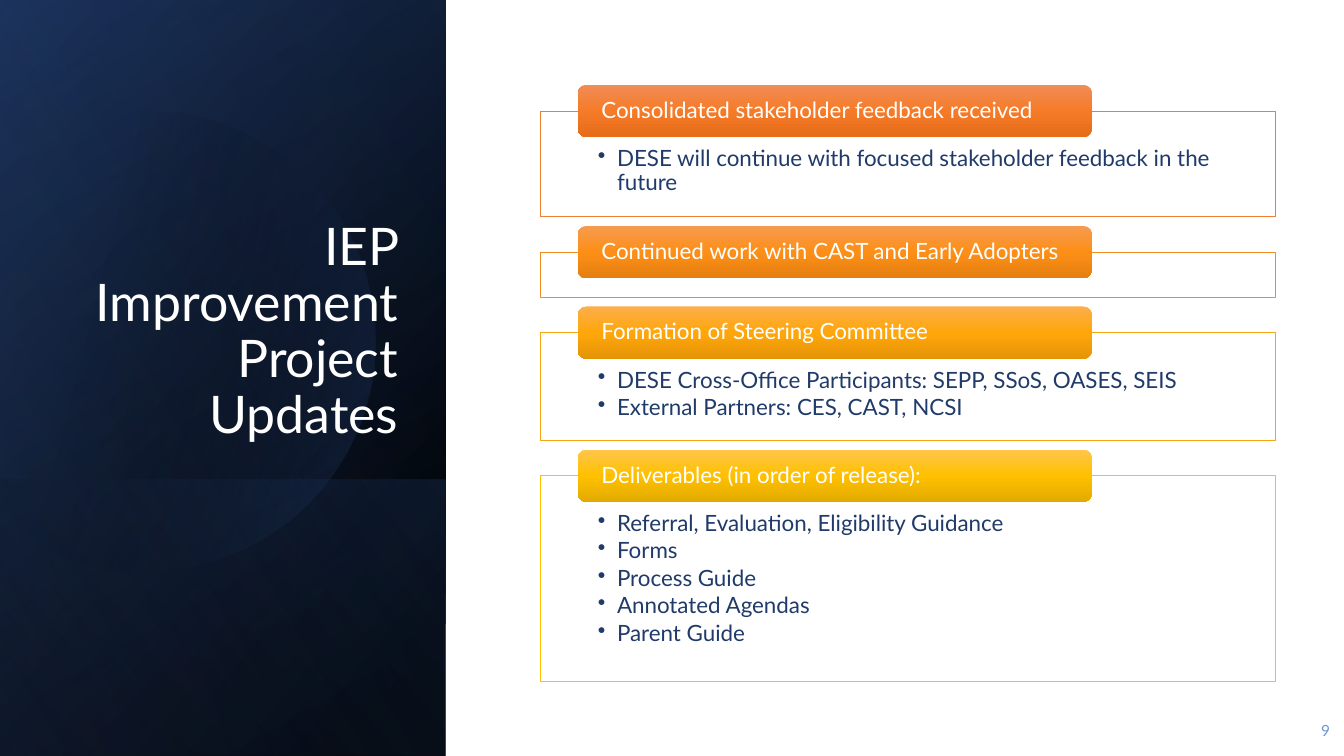
from lxml import etree
from pptx import Presentation
from pptx.dml.color import RGBColor
from pptx.enum.shapes import MSO_SHAPE
from pptx.enum.text import MSO_ANCHOR, MSO_AUTO_SIZE, PP_ALIGN
from pptx.oxml.ns import qn
from pptx.util import Inches, Pt

RECTANGLE, ROUNDED = MSO_SHAPE.RECTANGLE, MSO_SHAPE.ROUNDED_RECTANGLE
LEFT, RIGHT = PP_ALIGN.LEFT, PP_ALIGN.RIGHT
TOP, MIDDLE, BOTTOM = MSO_ANCHOR.TOP, MSO_ANCHOR.MIDDLE, MSO_ANCHOR.BOTTOM
NO_AUTOFIT = MSO_AUTO_SIZE.NONE

FONT = "Lato"
WHITE, NAVY, PALE_BLUE = "FFFFFF", "203B6A", "7095D4"
TITLE_LAYOUT = 5

# Side panel layers: left, top, width, height, gradient stops, angle
SIDE_LAYERS = [
    (-1.54, 1.54, 7.5, 4.42, [(8, "000000", 100), (100, "182C50", 100)], 50),
    (-1.54, 1.54, 7.5, 4.42, [(0, "000000", 0), (99, NAVY, 46)], 30),
    (0.84, 3.92, 2.74, 4.42, [(2, NAVY, 29), (100, "000000", 30)], 130),
]
SIDE_GLOW = (-1.54, 1.54, 7.5, 4.42, [(0, "000000", 0), (99, "547FCB", 11)], 120)

# Disc outline: start point, then cubic curves, then the cut at the slide edge
DISC_START = (1.49, 1.1)
DISC_CURVES = [
    ((2.46, 1.12), (3.35, 1.77), (3.63, 2.75)),
    ((3.98, 3.97), (3.28, 5.23), (2.07, 5.58)),
    ((1.31, 5.8), (0.53, 5.61), (0, 5.14)),
    ((0, 5.14), (0, 1.61), (0, 1.61)),
    ((0.23, 1.42), (0.5, 1.28), (0.8, 1.19)),
    ((1.03, 1.13), (1.26, 1.1), (1.49, 1.1)),
]
CURVE_STEPS = 16

# Panels: heading, bullets, height, line colour, heading gradient
PANEL_LEFT, PANEL_TOP, PANEL_WIDTH, PANEL_GAP = 5.36, 1.1, 7.29, 0.35
HEADING_LEFT, HEADING_RISE, HEADING_WIDTH, HEADING_HEIGHT = 5.73, 0.26, 5.1, 0.52
PANELS = [
    ("Consolidated stakeholder feedback received",
     ["DESE will continue with focused stakeholder feedback in the future"],
     1.05, "ED7D31", ("F18C57", "F67B28", "E56C19")),
    ("Continued work with CAST and Early Adopters", [],
     0.45, "F28E21", ("F69B50", "FD8F17", "E57F10")),
    ("Formation of Steering Committee",
     ["DESE Cross-Office Participants: SEPP, SSoS, OASES, SEIS",
      "External Partners: CES, CAST, NCSI"],
     1.07, "F8A411", ("FCAE4C", "FFA60A", "E59407")),
    ("Deliverables (in order of release):",
     ["Referral, Evaluation, Eligibility Guidance", "Forms", "Process Guide",
      "Annotated Agendas", "Parent Guide"],
     2.04, "FFC000", ("FFC64B", "FFC000", "E3AB00")),
]


def colour(value):
    return RGBColor.from_string(value)


def fill_gradient(shape, stops, angle):
    """Fill with (position, colour, opacity) stops, all in percent."""
    shape.fill.gradient()
    gradient = shape._element.spPr.find(qn("a:gradFill"))
    for child in list(gradient):
        gradient.remove(child)
    gradient.set("rotWithShape", "1")
    stop_list = etree.SubElement(gradient, qn("a:gsLst"))
    for position, value, opacity in stops:
        stop = etree.SubElement(stop_list, qn("a:gs"), pos=str(position * 1000))
        tint = etree.SubElement(stop, qn("a:srgbClr"), val=value)
        if opacity < 100:
            etree.SubElement(tint, qn("a:alpha"), val=str(opacity * 1000))
    etree.SubElement(gradient, qn("a:lin"), ang=str(angle * 60000), scaled="0")


def add_box(page, kind, left, top, width, height):
    box = page.shapes.add_shape(
        kind, Inches(left), Inches(top), Inches(width), Inches(height))
    box.shadow.inherit = False
    box.line.fill.background()
    return box


def set_frame(shape, anchor, insets=(0.1, 0.05, 0.1, 0.05)):
    frame = shape.text_frame
    frame.word_wrap = True
    frame.auto_size = NO_AUTOFIT
    frame.vertical_anchor = anchor
    (frame.margin_left, frame.margin_top,
     frame.margin_right, frame.margin_bottom) = map(Inches, insets)
    return frame


def write(para, text, size, ink, align=LEFT):
    para.alignment = align
    para.line_spacing = 0.9
    span = para.add_run()
    span.text = text
    span.font.name = FONT
    span.font.size = Pt(size)
    span.font.color.rgb = colour(ink)


def add_bullet(para):
    properties = para._p.get_or_add_pPr()
    properties.set("marL", str(Inches(0.19)))
    properties.set("indent", str(-Inches(0.19)))
    etree.SubElement(properties, qn("a:buChar"), char="•")


def add_side_layer(page, left, top, width, height, stops, angle):
    layer = add_box(page, RECTANGLE, left, top, width, height)
    layer.rotation = 90
    layer._element.spPr.xfrm.set("flipH", "1")
    fill_gradient(layer, stops, angle)


def curve_points(start, first, second, end):
    for step in range(1, CURVE_STEPS + 1):
        t = step / CURVE_STEPS
        u = 1 - t
        yield tuple(Inches(u**3 * a + 3 * u * u * t * b + 3 * u * t * t * c + t**3 * d)
                    for a, b, c, d in zip(start, first, second, end))


def add_disc(page):
    builder = page.shapes.build_freeform(*map(Inches, DISC_START))
    start = DISC_START
    for first, second, end in DISC_CURVES:
        builder.add_line_segments(curve_points(start, first, second, end), close=False)
        start = end
    builder.add_line_segments([], close=True)
    disc = builder.convert_to_shape()
    disc.shadow.inherit = False
    disc.line.fill.background()
    fill_gradient(disc, [(29, "000000", 0), (100, NAVY, 43)], 14)


def add_title(page):
    title = page.shapes.title
    title.left, title.top = Inches(0.64), Inches(1.84)
    title.width, title.height = Inches(3.41), Inches(2.62)
    frame = set_frame(title, BOTTOM)
    write(frame.paragraphs[0], "IEP Improvement Project Updates", 37, WHITE, RIGHT)
    # Bring the title in front of the side panel
    page.shapes._spTree.append(title._element)


def add_panel(page, top, heading, bullets, height, line, shades):
    box = add_box(page, RECTANGLE, PANEL_LEFT, top, PANEL_WIDTH, height)
    box.fill.solid()
    box.fill.fore_color.rgb = colour(WHITE)
    box.line.color.rgb = colour(line)
    box.line.width = Pt(0.5)
    if bullets:
        frame = set_frame(box, TOP, (0.57, 0.36, 0.57, 0.12))
        for index, text in enumerate(bullets):
            para = frame.add_paragraph() if index else frame.paragraphs[0]
            add_bullet(para)
            para.space_after = Pt(2.4)
            write(para, text, 16, NAVY)

    tab = add_box(page, ROUNDED, HEADING_LEFT, top - HEADING_RISE,
                  HEADING_WIDTH, HEADING_HEIGHT)
    fill_gradient(tab, [(index * 50, shade, 100)
                        for index, shade in enumerate(shades)], 90)
    frame = set_frame(tab, MIDDLE, (0.21, 0, 0.21, 0))
    write(frame.paragraphs[0], heading, 16, WHITE)


def add_page_number(page):
    box = page.shapes.add_textbox(
        Inches(12.8), Inches(7.06), Inches(0.49), Inches(0.4))
    write(set_frame(box, MIDDLE).paragraphs[0], "9", 11, PALE_BLUE, RIGHT)


def main():
    deck = Presentation()
    deck.slide_width, deck.slide_height = Inches(13.33), Inches(7.5)
    page = deck.slides.add_slide(deck.slide_layouts[TITLE_LAYOUT])

    # Side panel with title
    for layer in SIDE_LAYERS:
        add_side_layer(page, *layer)
    add_disc(page)
    add_side_layer(page, *SIDE_GLOW)
    add_title(page)

    # Stacked panels
    top = PANEL_TOP
    for heading, bullets, height, line, shades in PANELS:
        add_panel(page, top, heading, bullets, height, line, shades)
        top += height + PANEL_GAP

    add_page_number(page)
    deck.save("out.pptx")


if __name__ == "__main__":
    main()
